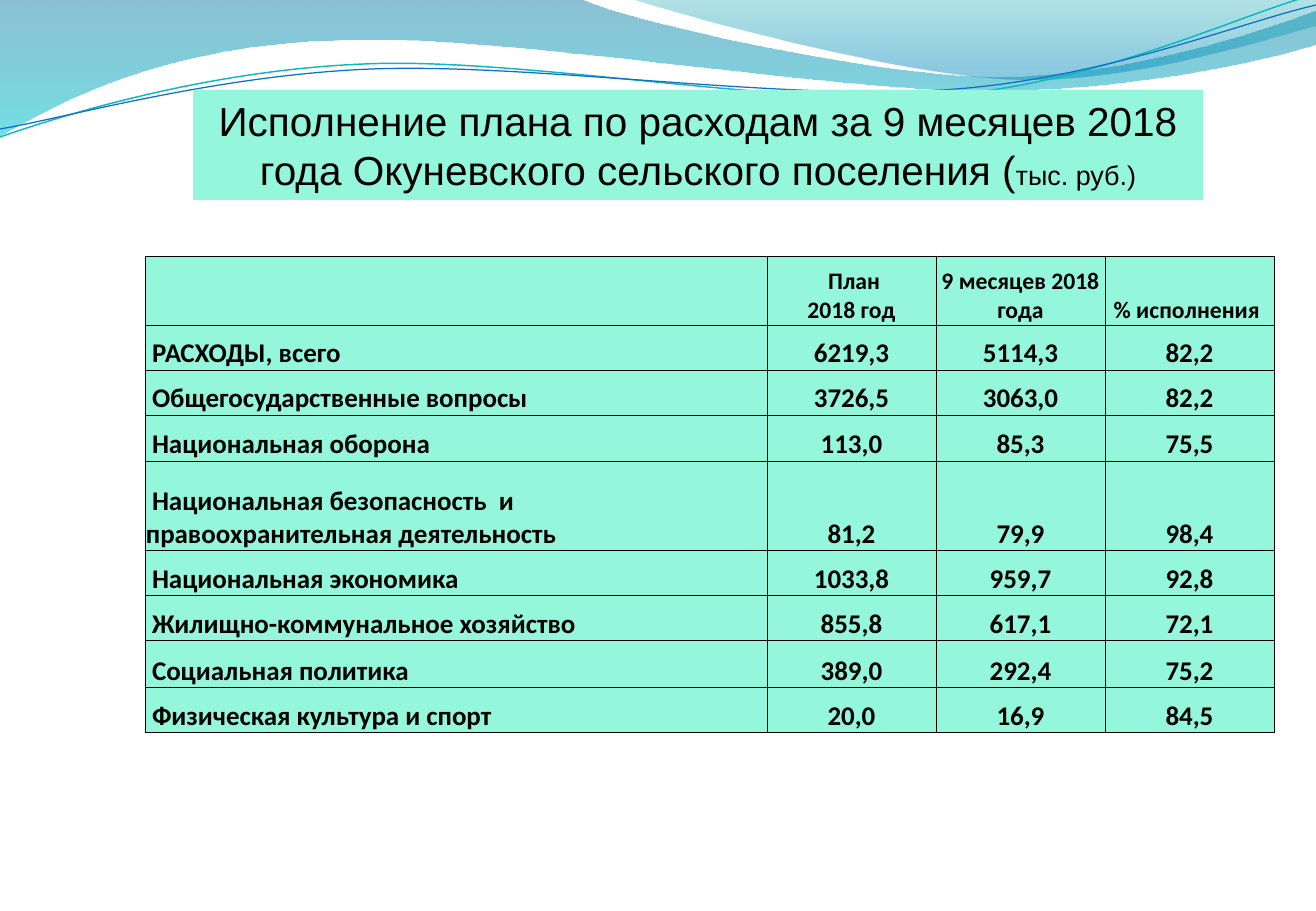
from dataclasses import dataclass

from lxml import etree
from pptx import Presentation
from pptx.dml.color import RGBColor
from pptx.enum.shapes import MSO_SHAPE
from pptx.enum.text import MSO_ANCHOR, MSO_AUTO_SIZE, PP_ALIGN
from pptx.oxml.ns import qn
from pptx.util import Pt

PX = 7526
SLIDE_WIDTH, SLIDE_HEIGHT = 1316, 911
RECTANGLE = MSO_SHAPE.RECTANGLE
CENTER, LEFT = PP_ALIGN.CENTER, PP_ALIGN.LEFT
MIDDLE, BOTTOM = MSO_ANCHOR.MIDDLE, MSO_ANCHOR.BOTTOM
GROW = MSO_AUTO_SIZE.SHAPE_TO_FIT_TEXT


@dataclass(frozen=True)
class Theme:
    """Colours, fonts and type sizes of the slide."""
    mint: str = "94F7DC"
    ink: str = "000000"
    teal_line: str = "0AB8BF"
    blue_line: str = "0F6FC6"
    wide_wave: tuple = ((0, "0074A1", 45), (100, "00C6CF", 55))
    right_wave: tuple = ((0, "00A1A9", 30), (80, "008BBF", 45))
    title_font: str = "Arial"
    table_font: str = "Calibri"
    title_size: int = 24
    unit_size: int = 16
    header_size: int = 14
    body_size: int = 16
    border_width: float = 0.5


THEME = Theme()

WIDE_WAVE = [(0, 0), (580, -1), (626, 21, 874, 77, 999, 77), (1123, 77, 1261, 32, 1316, 11),
             (1317, 44), (1294, 53, 1145, 92, 982, 91), (819, 91, 503, 34, 339, 41),
             (170, 44, 61, 101, -1, 137), (0, 0)]
RIGHT_WAVE = [(631, -1), (671, 13, 898, 75, 1012, 79), (1126, 84, 1266, 39, 1316, 26),
              (1316, 0), (631, -1)]
TEAL_CURVE = [(0, 137), (63, 115, 208, 70, 365, 64), (520, 57, 780, 107, 938, 96),
              (1096, 85, 1236, 16, 1313, -5)]
BLUE_CURVE = [(0, 129), (62, 119, 215, 75, 373, 69), (530, 63, 786, 101, 943, 90),
              (1101, 80, 1238, 23, 1316, 5)]

COLUMN_WIDTHS = [622, 169, 169, 169]
ROW_HEIGHTS = [69, 45, 45, 46, 90, 45, 45, 47, 45]
HEADER = ["", " План\n2018 год", "9 месяцев 2018 года", "% исполнения "]
EXPENSES = [
    [" РАСХОДЫ, всего", "6219,3", "5114,3", "82,2"],
    [" Общегосударственные вопросы", "3726,5", "3063,0", "82,2"],
    [" Национальная оборона", "113,0", "85,3", "75,5"],
    [" Национальная безопасность  и правоохранительная деятельность", "81,2", "79,9", "98,4"],
    [" Национальная экономика", "1033,8", "959,7", "92,8"],
    [" Жилищно-коммунальное хозяйство", "855,8", "617,1", "72,1"],
    [" Социальная политика", "389,0", "292,4", "75,2"],
    [" Физическая культура и спорт", "20,0", "16,9", "84,5"],
]


def color(value):
    """Turn a hex string into a colour."""
    return RGBColor.from_string(value)


def add_run(paragraph, text, font, size, bold=False):
    """Add one run of dark text to a paragraph."""
    run = paragraph.add_run()
    run.text = text
    run.font.name = font
    run.font.size = Pt(size)
    run.font.bold = bold
    run.font.color.rgb = color(THEME.ink)


def add_outline(slide, box, segments, closed):
    """Draw an outline of lines and cubic curves, relative to the box."""
    left, top = box[:2]
    points = [((x + left) * PX, (y + top) * PX)
              for segment in segments for x, y in zip(segment[::2], segment[1::2])]
    builder = slide.shapes.build_freeform(*points[0])
    builder.add_line_segments(points[1:], close=closed)
    shape = builder.convert_to_shape()
    shape.shadow.inherit = False
    steps = iter(list(shape._element.iter(qn("a:lnTo"))))
    for segment in segments[1:]:
        step = next(steps)
        if len(segment) == 6:
            step.addprevious(curve := etree.Element(qn("a:cubicBezTo")))
            for piece in (step, next(steps), next(steps)):
                curve.append(piece[0])
                piece.getparent().remove(piece)
    return shape


def add_waves(slide, box):
    """Draw the translucent waves and the two thin curves of the top band."""
    for segments, stops in ((WIDE_WAVE, THEME.wide_wave), (RIGHT_WAVE, THEME.right_wave)):
        wave = add_outline(slide, box, segments, True)
        wave.fill.gradient()
        wave.fill.gradient_angle = 270
        for stop, (position, value, _) in zip(wave.fill.gradient_stops, stops):
            stop.position = position / 100
            stop.color.rgb = color(value)
        for tint, (_, _, opacity) in zip(wave._element.spPr.iter(qn("a:srgbClr")), stops):
            etree.SubElement(tint, qn("a:alpha"), val=str(opacity * 1000))
        wave.line.fill.background()
    for segments, value, width in ((TEAL_CURVE, THEME.teal_line, 0.85),
                                   (BLUE_CURVE, THEME.blue_line, 0.75)):
        curve = add_outline(slide, box, segments, False)
        curve.fill.background()
        curve.line.color.rgb = color(value)
        curve.line.width = Pt(width)


def add_title(slide, box):
    """Place the title on its mint panel."""
    panel = slide.shapes.add_shape(RECTANGLE, *(length * PX for length in box))
    panel.shadow.inherit = False
    panel.fill.solid()
    panel.fill.fore_color.rgb = color(THEME.mint)
    panel.line.fill.background()
    frame = panel.text_frame
    frame.word_wrap = True
    frame.auto_size = GROW
    frame.vertical_anchor = MIDDLE
    paragraph = frame.paragraphs[0]
    paragraph.alignment = CENTER
    add_run(paragraph, "Исполнение плана по расходам за 9 месяцев 2018 года "
            "Окуневского сельского поселения (", THEME.title_font, THEME.title_size)
    add_run(paragraph, "тыс. руб.)", THEME.title_font, THEME.unit_size)


def style_cell(cell, is_label):
    """Give a cell its borders, fill, margins and anchor."""
    properties = cell._tc.get_or_add_tcPr()
    for side in ("a:lnL", "a:lnR", "a:lnT", "a:lnB"):
        border = etree.SubElement(properties, qn(side), w=str(Pt(THEME.border_width)))
        fill = etree.SubElement(border, qn("a:solidFill"))
        etree.SubElement(fill, qn("a:srgbClr"), val=THEME.ink)
    cell.fill.solid()
    cell.fill.fore_color.rgb = color(THEME.mint)
    cell.margin_left = cell.margin_top = PX
    cell.margin_right = 40 * PX if is_label else PX
    cell.margin_bottom = 0
    cell.vertical_anchor = BOTTOM


def fill_cell(cell, text, size, is_label):
    """Write the text of a cell, one paragraph a line."""
    frame = cell.text_frame
    for index, line in enumerate(text.splitlines()):
        paragraph = frame.add_paragraph() if index else frame.paragraphs[0]
        paragraph.alignment = LEFT if is_label else CENTER
        add_run(paragraph, line, THEME.table_font, size, bold=True)


def add_expense_table(slide, box):
    """Build the table of planned and actual expenses."""
    rows = [HEADER] + EXPENSES
    table = slide.shapes.add_table(len(rows), len(HEADER), *(length * PX for length in box)).table
    table.first_row = table.horz_banding = False
    for column, width in zip(table.columns, COLUMN_WIDTHS):
        column.width = width * PX
    for row_index, (texts, height) in enumerate(zip(rows, ROW_HEIGHTS)):
        table.rows[row_index].height = height * PX
        size = THEME.body_size if row_index else THEME.header_size
        for column_index, text in enumerate(texts):
            cell = table.cell(row_index, column_index)
            is_label = column_index == 0
            style_cell(cell, is_label)
            fill_cell(cell, text, size, is_label)


def main():
    """Build the slide and save the presentation."""
    presentation = Presentation()
    presentation.slide_width = SLIDE_WIDTH * PX
    presentation.slide_height = SLIDE_HEIGHT * PX
    slide = presentation.slides.add_slide(presentation.slide_layouts[6])
    add_waves(slide, (0, 0, SLIDE_WIDTH, 137))
    add_expense_table(slide, (145, 256, sum(COLUMN_WIDTHS), sum(ROW_HEIGHTS)))
    add_title(slide, (193, 90, 1010, 110))
    presentation.save("out.pptx")


if __name__ == "__main__":
    main()
